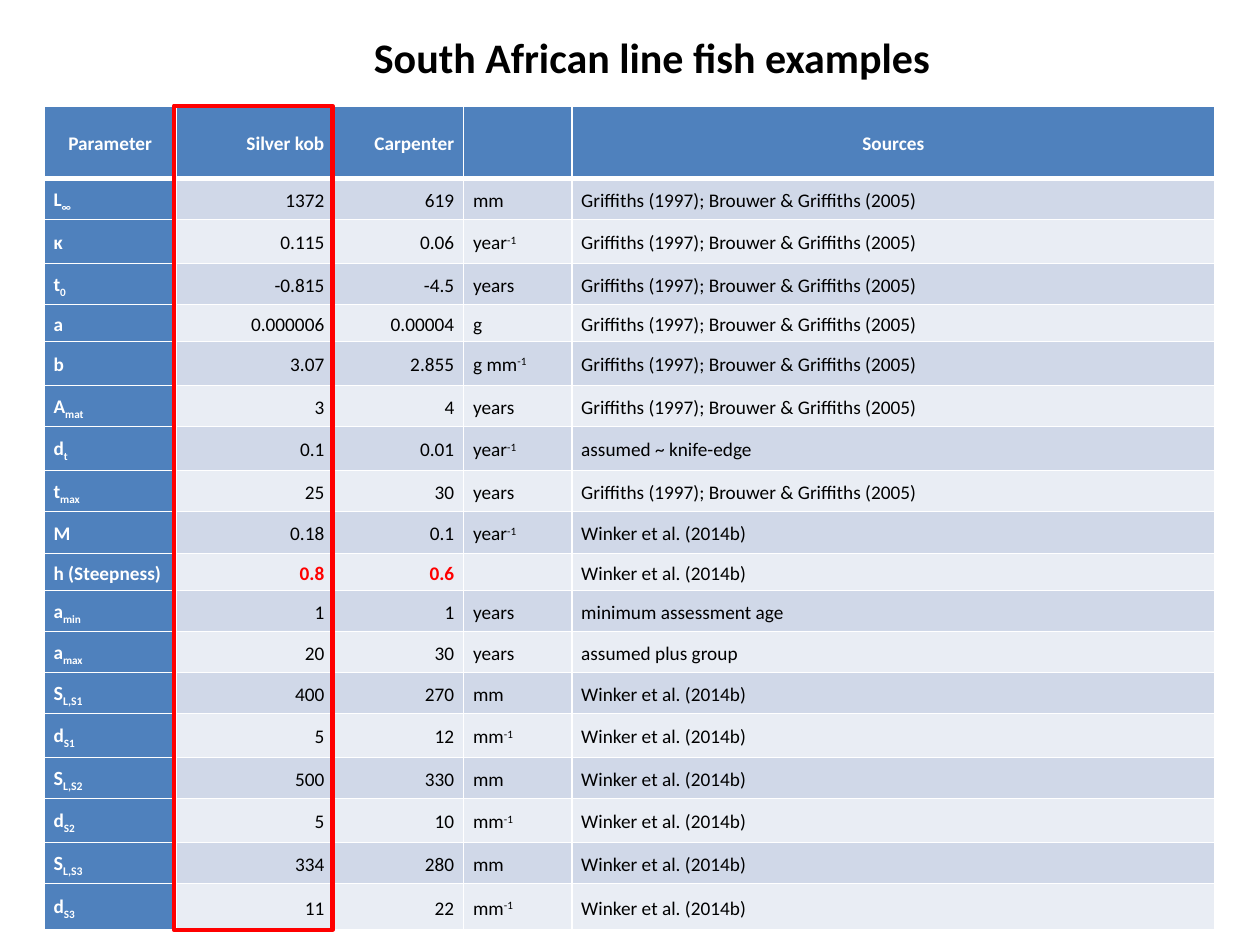
import pptx
import pptx.dml.color
import pptx.enum.shapes
import pptx.enum.text
import pptx.util
from lxml import etree

Pt = pptx.util.Pt
RGBColor = pptx.dml.color.RGBColor
ALIGN = pptx.enum.text.PP_ALIGN
ANCHOR = pptx.enum.text.MSO_ANCHOR

BLACK = RGBColor(0x00, 0x00, 0x00)
WHITE = RGBColor(0xFF, 0xFF, 0xFF)
RED = RGBColor(0xFF, 0x00, 0x00)
BLUE = RGBColor(0x4F, 0x81, 0xBD)
BAND_DARK = RGBColor(0xD0, 0xD8, 0xE8)
BAND_LIGHT = RGBColor(0xE9, 0xED, 0xF4)

# Marks that split a label into base text and a shifted part, in percent
SHIFTS = {"_": -25, "^": 30}

GRIFFITHS = "Griffiths (1997); Brouwer & Griffiths (2005)"
WINKER = "Winker et al. (2014b)"
HEADER = ("Parameter", "Silver kob", "Carpenter", "", "Sources")
PARAMETERS = [
    ("L_∞", "1372", "619", "mm", GRIFFITHS),
    ("κ", "0.115", "0.06", "year^-1", GRIFFITHS),
    ("t_0", "-0.815", "-4.5", "years", GRIFFITHS),
    ("a", "0.000006", "0.00004", "g", GRIFFITHS),
    ("b", "3.07", "2.855", "g mm^-1", GRIFFITHS),
    ("A_mat", "3", "4", "years", GRIFFITHS),
    ("d_t", "0.1", "0.01", "year^-1", "assumed ~ knife-edge"),
    ("t_max", "25", "30", "years", GRIFFITHS),
    ("M", "0.18", "0.1", "year^-1", WINKER),
    ("h (Steepness)", "0.8", "0.6", "", WINKER),
    ("a_min", "1", "1", "years", "minimum assessment age"),
    ("a_max", "20", "30", "years", "assumed plus group"),
    ("S_L,S1", "400", "270", "mm", WINKER),
    ("d_S1", "5", "12", "mm^-1", WINKER),
    ("S_L,S2", "500", "330", "mm", WINKER),
    ("d_S2", "5", "10", "mm^-1", WINKER),
    ("S_L,S3", "334", "280", "mm", WINKER),
    ("d_S3", "11", "22", "mm^-1", WINKER),
]
COL_WIDTHS = [75.6, 90, 74.2, 61.8, 367.5]
ROW_HEIGHTS = [41.5, 23.4, 25.2, 23.4, 21.1, 25.2, 23.4, 25.2, 23.4, 24.2,
               21.1, 23.4, 23.4, 23.4, 25.2, 23.4, 25.2, 23.4, 26.6]
COL_ALIGN = [ALIGN.LEFT, ALIGN.RIGHT, ALIGN.RIGHT, ALIGN.LEFT, ALIGN.LEFT]


class Deck:
    font = "Calibri"
    size = 11

    def __init__(self, width, height):
        self.prs = pptx.Presentation()
        self.prs.slide_width, self.prs.slide_height = Pt(width), Pt(height)
        self.s = self.prs.slides.add_slide(self.prs.slide_layouts[6])

    def style(self, r, size, color, bold):
        r.font.name, r.font.size, r.font.bold = self.font, Pt(size), bold
        r.font.color.rgb = color

    def title(self, x, y, w, h, text):
        tf = self.s.shapes.add_textbox(Pt(x), Pt(y), Pt(w), Pt(h)).text_frame
        tf.word_wrap = False
        tf.auto_size = pptx.enum.text.MSO_AUTO_SIZE.SHAPE_TO_FIT_TEXT
        tf.text = text
        self.style(tf.paragraphs[0].runs[0], 24, BLACK, True)

    def frame(self, x, y, w, h):
        sp = self.s.shapes.add_shape(pptx.enum.shapes.MSO_SHAPE.RECTANGLE,
                                     Pt(x), Pt(y), Pt(w), Pt(h))
        sp.shadow.inherit = False
        sp.fill.background()
        sp.line.color.rgb, sp.line.width = RED, Pt(2.5)

    def borders(self, cell, top, bottom):
        tc_pr = cell._tc.get_or_add_tcPr()
        ns = pptx.oxml.ns.nsdecls("a")
        widths = {"L": 1, "R": 1, "T": top, "B": bottom}
        for i, (side, width) in enumerate(widths.items()):
            tc_pr.insert(i, etree.fromstring(
                f'<a:ln{side} {ns} w="{Pt(width)}"><a:solidFill>'
                f'<a:srgbClr val="{WHITE}"/></a:solidFill></a:ln{side}>'))

    def cell(self, cell, text, align, fill, size, color, bold):
        cell.margin_left = cell.margin_right = Pt(5.4)
        cell.margin_top = cell.margin_bottom = 0
        cell.vertical_anchor = ANCHOR.MIDDLE
        cell.fill.solid()
        cell.fill.fore_color.rgb = fill
        p = cell.text_frame.paragraphs[0]
        p.alignment, p.line_spacing = align, 1.15
        if not text:
            # Keeps an empty cell from stretching its row
            etree.SubElement(p._p, pptx.oxml.ns.qn("a:endParaRPr"),
                             sz=str(size * 100))
            return
        mark = next((m for m in SHIFTS if m in text), None)
        for i, part in enumerate(text.split(mark) if mark else [text]):
            r = p.add_run()
            r.text = part
            self.style(r, size, color, bold)
            if i:
                r._r.get_or_add_rPr().set("baseline", str(SHIFTS[mark] * 1000))

    def table(self, x, y, rows):
        shape = self.s.shapes.add_table(
            len(rows), len(COL_WIDTHS), Pt(x), Pt(y),
            Pt(sum(COL_WIDTHS)), Pt(sum(ROW_HEIGHTS)))
        tbl = shape.table
        tbl.first_row = tbl.horz_banding = False
        for col, width in zip(tbl.columns, COL_WIDTHS):
            col.width = Pt(width)
        for row, height in zip(tbl.rows, ROW_HEIGHTS):
            row.height = Pt(height)
        for i, row in enumerate(rows):
            for j, text in enumerate(row):
                align, size, color, bold = COL_ALIGN[j], self.size, BLACK, False
                fill = BAND_DARK if i % 2 else BAND_LIGHT
                if i == 0 or j == 0:
                    fill, color, bold = BLUE, WHITE, True
                if i == 0 and j in (0, 4):
                    align = ALIGN.CENTER
                elif j == 0 and text.startswith("S_"):
                    align, size = ALIGN.JUSTIFY, 11.5
                elif row[0].startswith("h ") and j in (1, 2):
                    color, bold = RED, True
                self.cell(tbl.cell(i, j), text, align, fill, size, color, bold)
                self.borders(tbl.cell(i, j), 3 if i == 1 else 1,
                             3 if i == 0 else 1)


def main():
    deck = Deck(720, 540)
    # Heading
    deck.title(206.6, 14.4, 335.5, 36, "South African line fish examples")
    # Parameter table
    deck.table(25.2, 60.5, [HEADER] + PARAMETERS)
    # Highlight of the silver kob column
    deck.frame(99.4, 60.5, 90.7, 470.9)
    deck.prs.save("out.pptx")


if __name__ == "__main__":
    main()
